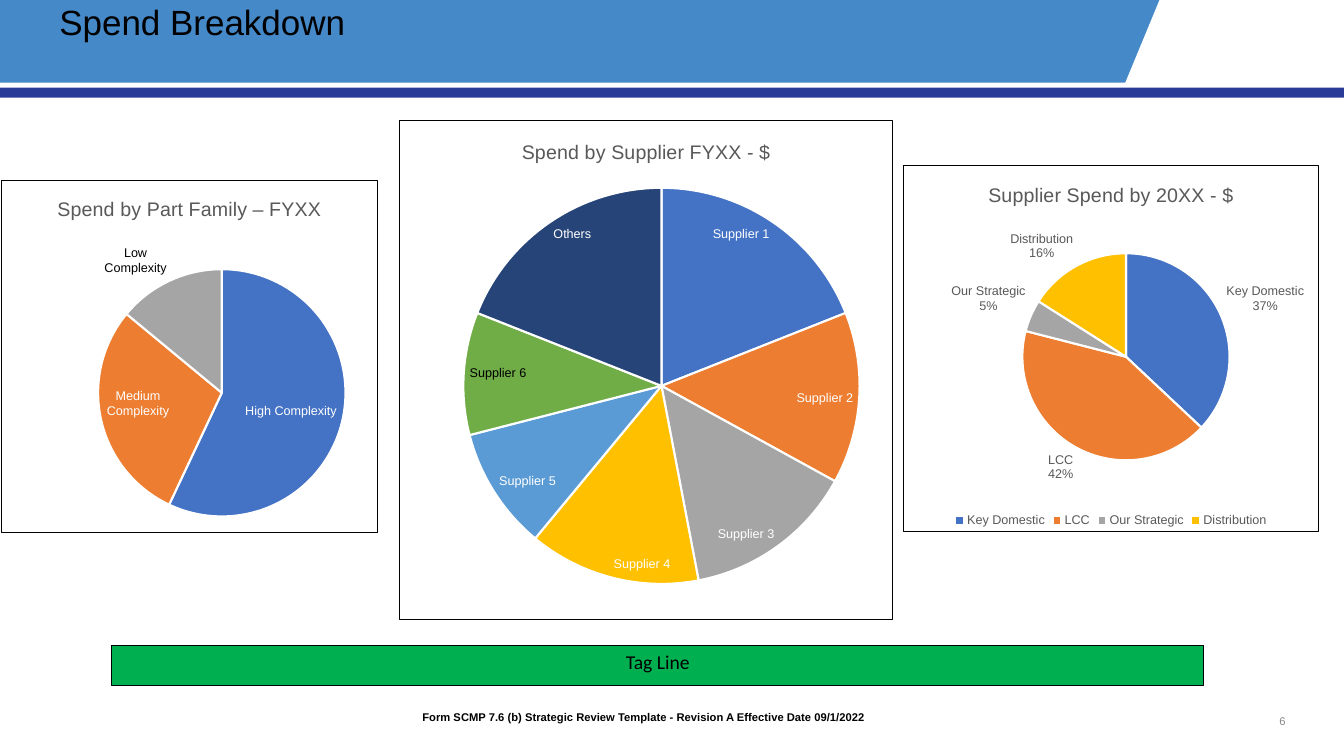
from lxml import etree
from pptx import Presentation
from pptx.chart.data import CategoryChartData
from pptx.dml.color import RGBColor
from pptx.enum.chart import XL_CHART_TYPE, XL_LABEL_POSITION, XL_LEGEND_POSITION
from pptx.enum.shapes import MSO_SHAPE
from pptx.enum.text import MSO_ANCHOR, PP_ALIGN
from pptx.oxml import parse_xml
from pptx.oxml.ns import nsdecls, qn
from pptx.util import Inches, Pt

PIE = XL_CHART_TYPE.PIE
INSIDE_END = XL_LABEL_POSITION.INSIDE_END
OUTSIDE_END = XL_LABEL_POSITION.OUTSIDE_END
LEGEND_BOTTOM = XL_LEGEND_POSITION.BOTTOM
RECTANGLE = MSO_SHAPE.RECTANGLE
TOP, MIDDLE = MSO_ANCHOR.TOP, MSO_ANCHOR.MIDDLE
LEFT, CENTER, RIGHT = PP_ALIGN.LEFT, PP_ALIGN.CENTER, PP_ALIGN.RIGHT

BLACK = RGBColor(0x00, 0x00, 0x00)
WHITE = RGBColor(0xFF, 0xFF, 0xFF)
GRAY = RGBColor(0x59, 0x59, 0x59)
PAGE_GRAY = RGBColor(0x88, 0x88, 0x88)
BANNER_BLUE = RGBColor(0x45, 0x89, 0xC8)
STRIPE_BLUE = RGBColor(0x2A, 0x3B, 0x97)
TAG_GREEN = RGBColor(0x00, 0xB0, 0x50)
SLICE_COLORS = [
    RGBColor(0x44, 0x72, 0xC4), RGBColor(0xED, 0x7D, 0x31),
    RGBColor(0xA5, 0xA5, 0xA5), RGBColor(0xFF, 0xC0, 0x00),
    RGBColor(0x5B, 0x9B, 0xD5), RGBColor(0x70, 0xAD, 0x47),
    RGBColor(0x26, 0x44, 0x78),
]


def style_font(font, size, color, name="Arial", bold=False):
    font.size = Pt(size)
    font.name = name
    font.bold = bold
    font.color.rgb = color


def paint(shape, fill, line=None):
    shape.shadow.inherit = False
    shape.fill.solid()
    shape.fill.fore_color.rgb = fill
    if line is None:
        shape.line.fill.background()
    else:
        shape.line.color.rgb = line
        shape.line.width = Pt(0.75)


def add_rectangle(page, box, fill, line=None):
    shape = page.shapes.add_shape(RECTANGLE, *map(Inches, box))
    paint(shape, fill, line)
    return shape


def write(shape, text, size, color, name="Arial", bold=False, align=LEFT, anchor=TOP):
    frame = shape.text_frame
    frame.word_wrap = True
    frame.vertical_anchor = anchor
    para = frame.paragraphs[0]
    para.text = text
    para.alignment = align
    style_font(para.runs[0].font, size, color, name, bold)
    return para


def add_text(page, box, text, size, color, **style):
    return write(page.shapes.add_textbox(*map(Inches, box)), text, size, color, **style)


def add_header(page, box):
    """Draw the banner with its slanted end, the stripe below and the title."""
    left, top, width, height = box
    right, banner_bottom = left + width, top + 0.82
    add_rectangle(page, (left, top, width - 0.14, 0.82), BANNER_BLUE)
    corner = [(right, top), (right, banner_bottom + 0.05), (right - 2.19, banner_bottom + 0.05)]
    builder = page.shapes.build_freeform(Inches(right - 1.83), Inches(top))
    builder.add_line_segments([(Inches(x), Inches(y)) for x, y in corner])
    paint(builder.convert_to_shape(), WHITE)
    add_rectangle(page, (left, top + height - 0.1, width, 0.1), STRIPE_BLUE)
    title = add_text(page, (left + 0.49, top, 9.49, 0.95), "Spend Breakdown", 25, BLACK)
    title.line_spacing = 0.9


def manual_layout(fractions):
    """Build an inner plot layout from a dict of x, y, w and h fractions."""
    sizes = "".join(f'<c:{key} val="{value:.3f}"/>' for key, value in fractions.items())
    return parse_xml(
        f'<c:layout {nsdecls("c")}><c:manualLayout><c:layoutTarget val="inner"/>'
        f'<c:xMode val="edge"/><c:yMode val="edge"/>{sizes}'
        "</c:manualLayout></c:layout>")


def place_pie(chart, box, circle):
    """Fix the pie to a circle (centre x, centre y, radius) inside the box."""
    width, height = box[2:]
    x, y, radius = circle
    plot_area = chart._chartSpace.chart.plotArea
    for old in plot_area.findall(qn("c:layout")):
        plot_area.remove(old)
    plot_area.insert(0, manual_layout({
        "x": (x - radius) / width, "y": (y - radius) / height,
        "w": 2 * radius / width, "h": 2 * radius / height}))


def frame_chart(chart):
    frame = parse_xml(
        f'<c:spPr {nsdecls("c", "a")}><a:solidFill><a:srgbClr val="{WHITE}"/></a:solidFill>'
        f'<a:ln w="{Pt(0.75)}"><a:solidFill><a:srgbClr val="{BLACK}"/></a:solidFill></a:ln>'
        "</c:spPr>")
    chart._chartSpace.chart.addnext(frame)


def label_slices(series, color, position, percent):
    labels = series.data_labels
    labels.show_value = False
    labels.show_category_name = True
    labels.show_percentage = percent
    labels.position = position
    style_font(labels.font, 9, color)
    if percent:
        separator = etree.Element(qn("c:separator"))
        separator.text = "\n"
        labels._element.find(qn("c:showBubbleSize")).addnext(separator)


def label_in_black(series, index, position):
    label = series.points[index].data_label
    style_font(label.font, 9, BLACK)
    label.position = position
    for element in series.data_labels._element.findall(qn("c:dLbl")):
        element.find(qn("c:showVal")).set("val", "0")
        element.find(qn("c:showCatName")).set("val", "1")


def add_pie(page, box, title, slices, circle, label_color=WHITE,
            label_position=INSIDE_END, percent=False, black_label=None):
    data = CategoryChartData()
    data.categories = list(slices)
    data.add_series("Series 1", list(slices.values()))
    chart = page.shapes.add_chart(PIE, *map(Inches, box), data).chart
    style_font(chart.font, 10, BLACK)
    frame_chart(chart)
    place_pie(chart, box, circle)

    chart.has_title = True
    para = chart.chart_title.text_frame.paragraphs[0]
    para.text = title
    style_font(para.runs[0].font, 14, GRAY)
    chart.chart_title.include_in_layout = False

    chart.plots[0].vary_by_categories = True
    series = chart.plots[0].series[0]
    for index, color in enumerate(SLICE_COLORS[:len(slices)]):
        slice_format = series.points[index].format
        slice_format.fill.solid()
        slice_format.fill.fore_color.rgb = color
        slice_format.line.color.rgb = WHITE
        slice_format.line.width = Pt(1.5)
    label_slices(series, label_color, label_position, percent)
    if black_label:
        label_in_black(series, *black_label)

    chart.has_legend = percent
    if percent:
        chart.legend.position = LEGEND_BOTTOM
        chart.legend.include_in_layout = False
        style_font(chart.legend.font, 9, GRAY)


def add_charts(page):
    add_pie(page, (0.01, 1.79, 3.74, 3.5), "Spend by Part Family – FYXX",
            {"High Complexity": 57, "Medium Complexity": 29, "Low Complexity": 14},
            circle=(2.19, 2.11, 1.23), black_label=(2, OUTSIDE_END))
    suppliers = [f"Supplier {number}" for number in range(1, 7)] + ["Others"]
    add_pie(page, (3.96, 1.19, 4.9, 4.96), "Spend by Supplier FYXX - $",
            dict(zip(suppliers, [19, 14, 14, 14, 10, 10, 19])),
            circle=(2.6, 2.64, 1.97), black_label=(5, INSIDE_END))
    add_pie(page, (8.96, 1.64, 4.12, 3.64), "Supplier Spend by 20XX - $",
            {"Key Domestic": 37, "LCC": 42, "Our Strategic": 5, "Distribution": 16},
            circle=(2.21, 1.9, 1.03), label_color=GRAY,
            label_position=OUTSIDE_END, percent=True)


def add_footer(page, box):
    """Place the tag line, the form reference and the page number."""
    left, top = box[:2]
    tag = add_rectangle(page, (left, top, box[2], 0.4), TAG_GREEN, BLACK)
    write(tag, "Tag Line", 14, BLACK, name="Calibri", align=CENTER)
    add_text(page, (left + 8.63, top + 0.55, 3.11, 0.4), "6", 8, PAGE_GRAY,
             align=RIGHT, anchor=MIDDLE)
    form = add_text(
        page, (left + 2.73, top + 0.61, 5.28, 0.38),
        "Form SCMP 7.6 (b) Strategic Review Template - Revision A Effective Date 09/1/2022",
        8, BLACK, bold=True)
    form.line_spacing = 0.9
    properties = form._p.get_or_add_pPr()
    properties.set("marL", str(Inches(0.5)))
    properties.set("indent", str(Inches(-0.25)))


def main():
    deck = Presentation()
    deck.slide_width, deck.slide_height = Inches(13.33), Inches(7.5)
    page = deck.slides.add_slide(deck.slide_layouts[6])
    add_header(page, (0, 0, 13.33, 0.97))
    add_charts(page)
    add_footer(page, (1.11, 6.4, 10.83, 0.99))
    deck.save("out.pptx")


if __name__ == "__main__":
    main()
